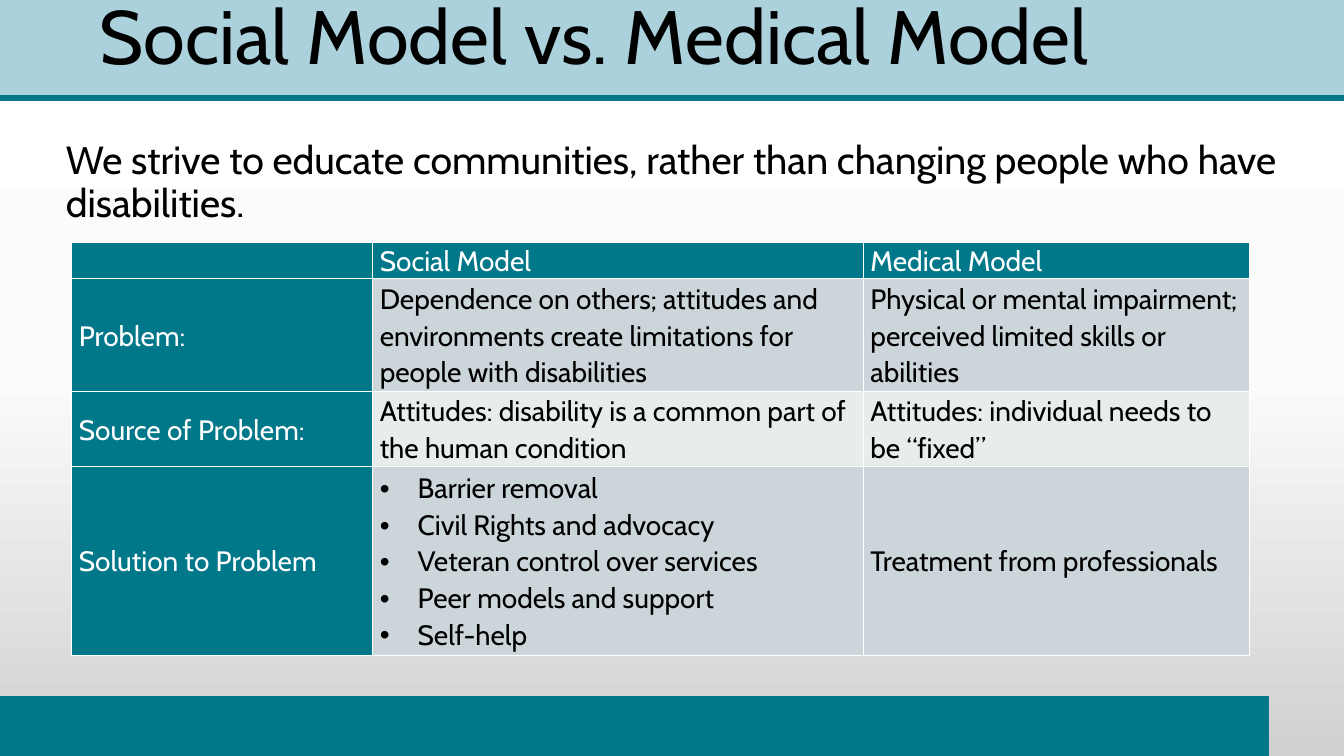
from copy import deepcopy

from lxml.etree import SubElement
from pptx import Presentation
from pptx.dml.color import RGBColor
from pptx.enum.shapes import MSO_SHAPE
from pptx.enum.text import MSO_ANCHOR
from pptx.oxml.ns import qn
from pptx.util import Pt

TEAL = RGBColor(0x00, 0x78, 0x8A)
PALE_BLUE = RGBColor(0xAB, 0xD2, 0xDC)
BAND_DARK = RGBColor(0xCC, 0xD6, 0xDA)
BAND_LIGHT = RGBColor(0xE7, 0xEC, 0xED)
BLACK = RGBColor(0x00, 0x00, 0x00)
WHITE = RGBColor(0xFF, 0xFF, 0xFF)
NEAR_WHITE = RGBColor(0xFB, 0xFB, 0xFB)
GREY = RGBColor(0xD1, 0xD1, 0xD1)
FONT = "Cabin"


def style_paragraph(para, size, color, spacing):
    para.line_spacing = spacing
    para.font.name = FONT
    para.font.size = Pt(size)
    para.font.bold = False
    para.font.color.rgb = color


def add_cell_borders(cell):
    props = cell._tc.get_or_add_tcPr()
    for side in ("a:lnL", "a:lnR", "a:lnT", "a:lnB"):
        line = SubElement(props, qn(side), w=str(Pt(1)))
        fill = SubElement(line, qn("a:solidFill"))
        SubElement(fill, qn("a:srgbClr"), val=str(WHITE))


deck = Presentation()
deck.slide_width, deck.slide_height = Pt(960), Pt(540)
page = deck.slides.add_slide(deck.slide_layouts[6])

# Background gradient, top to bottom
backdrop = page.background.fill
backdrop.gradient()
backdrop.gradient_angle = 270
stop_list = page.element.find(".//" + qn("a:gsLst"))
stop_list.append(deepcopy(stop_list[-1]))
for stop, (position, color) in zip(
        backdrop.gradient_stops, [(0, WHITE), (0.5, NEAR_WHITE), (1, GREY)]):
    stop.position = position
    stop.color.rgb = color

# Footer bar, title band and the rule below it
for top, width, height, color in [
    (497.5, 906, 42.5, TEAL),
    (0, 960, 67.7, PALE_BLUE),
    (68.4, 960, 3.6, TEAL),
]:
    bar = page.shapes.add_shape(
        MSO_SHAPE.RECTANGLE, 0, Pt(top), Pt(width), Pt(height))
    bar.shadow.inherit = False
    bar.fill.solid()
    bar.fill.fore_color.rgb = color
    bar.line.color.rgb = color
    bar.line.width = Pt(1)

# Comparison table
rows = [
    ["", "Social Model", "Medical Model"],
    ["Problem:",
     "Dependence on others; attitudes and environments create limitations "
     "for people with disabilities",
     "Physical or mental impairment; perceived limited skills or abilities"],
    ["Source of Problem:",
     "Attitudes: disability is a common part of the human condition",
     "Attitudes: individual needs to be “fixed”"],
    ["Solution to Problem",
     "Barrier removal\nCivil Rights and advocacy\n"
     "Veteran control over services\nPeer models and support\nSelf-help",
     "Treatment from professionals"],
]
column_widths = [215, 350.5, 275.5]
row_heights = [26, 80.5, 53.5, 135]
table = page.shapes.add_table(
    len(rows), len(column_widths), Pt(51.3), Pt(173),
    Pt(sum(column_widths)), Pt(sum(row_heights))).table
table.first_row = False
table.horz_banding = False
for column, width in zip(table.columns, column_widths):
    column.width = Pt(width)
for row, height in zip(table.rows, row_heights):
    row.height = Pt(height)

for r, texts in enumerate(rows):
    for c, text in enumerate(texts):
        cell = table.cell(r, c)
        is_heading = r == 0 or c == 0
        cell.margin_left = cell.margin_right = Pt(5)
        cell.margin_top = cell.margin_bottom = 0
        cell.vertical_anchor = MSO_ANCHOR.MIDDLE
        add_cell_borders(cell)
        cell.fill.solid()
        band = BAND_DARK if r % 2 else BAND_LIGHT
        cell.fill.fore_color.rgb = TEAL if is_heading else band
        cell.text = text
        paragraphs = cell.text_frame.paragraphs
        for para in paragraphs:
            if len(paragraphs) > 1:
                props = para._p.get_or_add_pPr()
                props.set("marL", str(Pt(27)))
                props.set("indent", str(Pt(-27)))
                SubElement(props, qn("a:buFont"), typeface="Arial")
                SubElement(props, qn("a:buChar"), char="•")
            style_paragraph(para, 20, WHITE if is_heading else BLACK, 1.07)

# Introduction and title
for left, top, width, height, size, anchor, text in [
    (40, 97.2, 880, 90, 28, MSO_ANCHOR.TOP,
     "We strive to educate communities, rather than changing people who "
     "have disabilities."),
    (64, 3.6, 828, 50.4, 54, MSO_ANCHOR.MIDDLE,
     "Social Model vs. Medical Model"),
]:
    box = page.shapes.add_textbox(Pt(left), Pt(top), Pt(width), Pt(height))
    frame = box.text_frame
    frame.word_wrap = True
    frame.vertical_anchor = anchor
    frame.text = text
    style_paragraph(frame.paragraphs[0], size, BLACK, 0.9)

deck.save("out.pptx")
